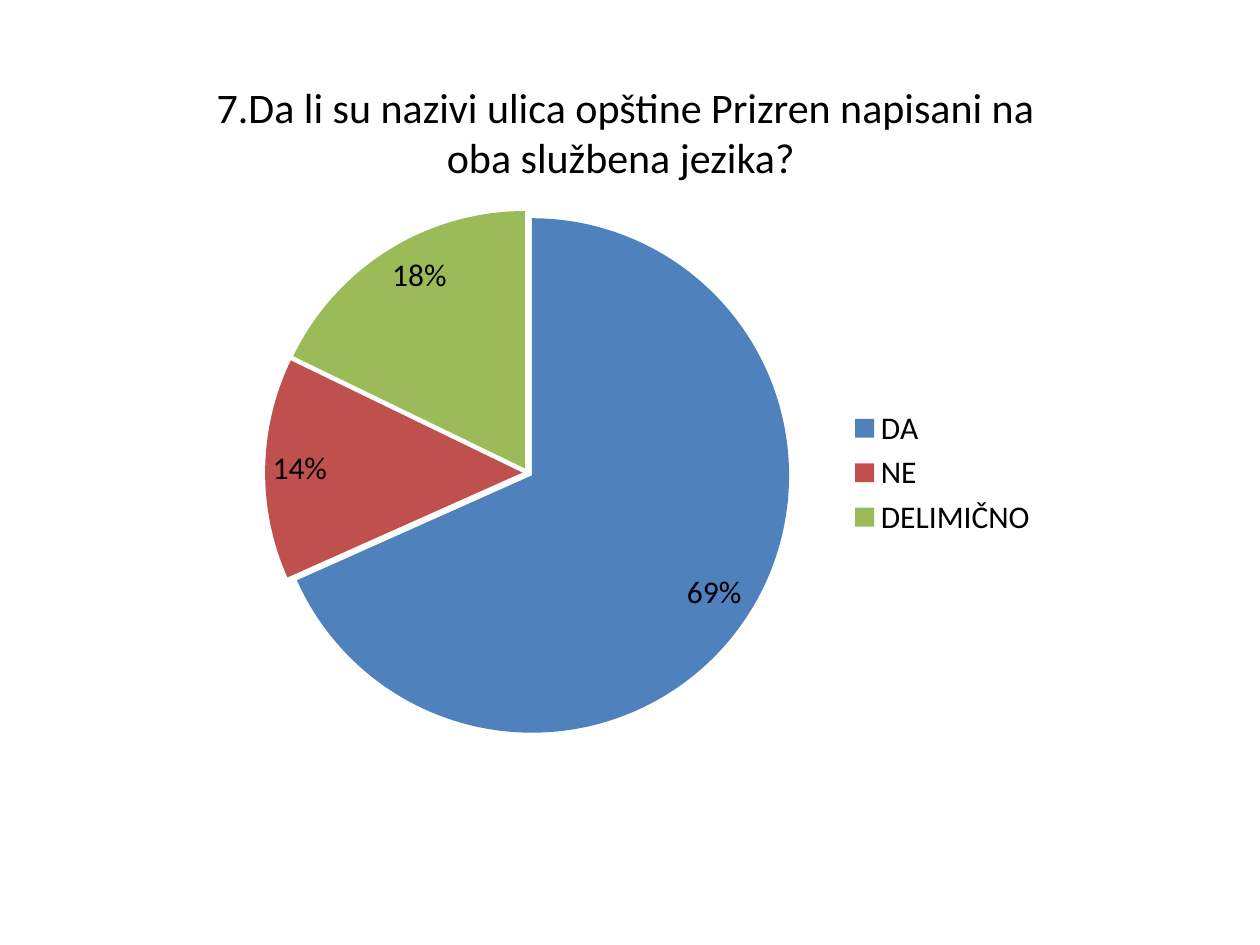
from dataclasses import dataclass

from lxml.etree import Element
from pptx import Presentation
from pptx.chart.data import CategoryChartData
from pptx.dml.color import RGBColor
from pptx.enum.chart import XL_CHART_TYPE as ChartType
from pptx.enum.chart import XL_LABEL_POSITION as LabelPosition
from pptx.enum.chart import XL_LEGEND_POSITION as LegendPosition
from pptx.enum.text import PP_ALIGN as Align
from pptx.oxml.ns import qn
from pptx.util import Cm, Pt


@dataclass(frozen=True)
class Answer:
    label: str
    percent: int
    color: str


QUESTION = "7.Da li su nazivi ulica opštine Prizren napisani na oba službena jezika? "
ANSWERS = [
    Answer("DA", 69, "4F81BD"),
    Answer("NE", 14, "C0504D"),
    Answer("DELIMIČNO", 18, "9BBB59"),
]
QUESTION_FORMAT = {"name": "Calibri", "size": Pt(24)}
CHART_FORMAT = {"name": "Calibri", "size": Pt(18)}
LABEL_FORMAT = {
    "show_value": True,
    "number_format": '0"%"',
    "number_format_is_linked": False,
    "position": LabelPosition.INSIDE_END,
}
LEGEND_FORMAT = {"position": LegendPosition.RIGHT, "include_in_layout": False}


def apply_format(target, values: dict) -> None:
    for attribute, value in values.items():
        setattr(target, attribute, value)


def set_color(color_format, hex_color: str) -> None:
    color_format.rgb = RGBColor.from_string(hex_color)


def format_font(font, values: dict) -> None:
    apply_format(font, values)
    font.fill.solid()
    set_color(font.fill.fore_color, "000000")


def add_question(slide, text: str) -> None:
    frame = slide.shapes.add_textbox(Cm(3.91), Cm(1.52), Cm(17.4), Cm(2.31)).text_frame
    frame.word_wrap = True
    paragraph = frame.paragraphs[0]
    paragraph.alignment = Align.CENTER
    run = paragraph.add_run()
    run.text = text
    format_font(run.font, QUESTION_FORMAT)


def explode(series, percent: int) -> None:
    """Pull all slices of the pie apart by a share of its radius."""
    explosion = Element(qn("c:explosion"), val=str(percent))
    series._element.find(qn("c:tx")).addnext(explosion)


def add_answer_pie(slide, answers: list[Answer]) -> None:
    chart_data = CategoryChartData()
    chart_data.categories = [answer.label for answer in answers]
    chart_data.add_series("Series 1", [answer.percent for answer in answers])
    chart = slide.shapes.add_chart(
        ChartType.PIE, Cm(4.24), Cm(3.89), Cm(16.94), Cm(11.28), chart_data
    ).chart
    format_font(chart.font, CHART_FORMAT)
    chart.has_title = False
    chart.has_legend = True
    apply_format(chart.legend, LEGEND_FORMAT)

    pie = chart.plots[0]
    pie.vary_by_categories = True
    pie.has_data_labels = True
    apply_format(pie.data_labels, LABEL_FORMAT)
    shares = pie.series[0]
    explode(shares, 2)
    for index, answer in enumerate(answers):
        fill = shares.points[index].format.fill
        fill.solid()
        set_color(fill.fore_color, answer.color)


def main() -> None:
    presentation = Presentation()
    presentation.slide_width, presentation.slide_height = Cm(25.4), Cm(19.05)
    slide = presentation.slides.add_slide(presentation.slide_layouts[6])
    add_question(slide, QUESTION)
    add_answer_pie(slide, ANSWERS)
    presentation.save("out.pptx")


if __name__ == "__main__":
    main()
